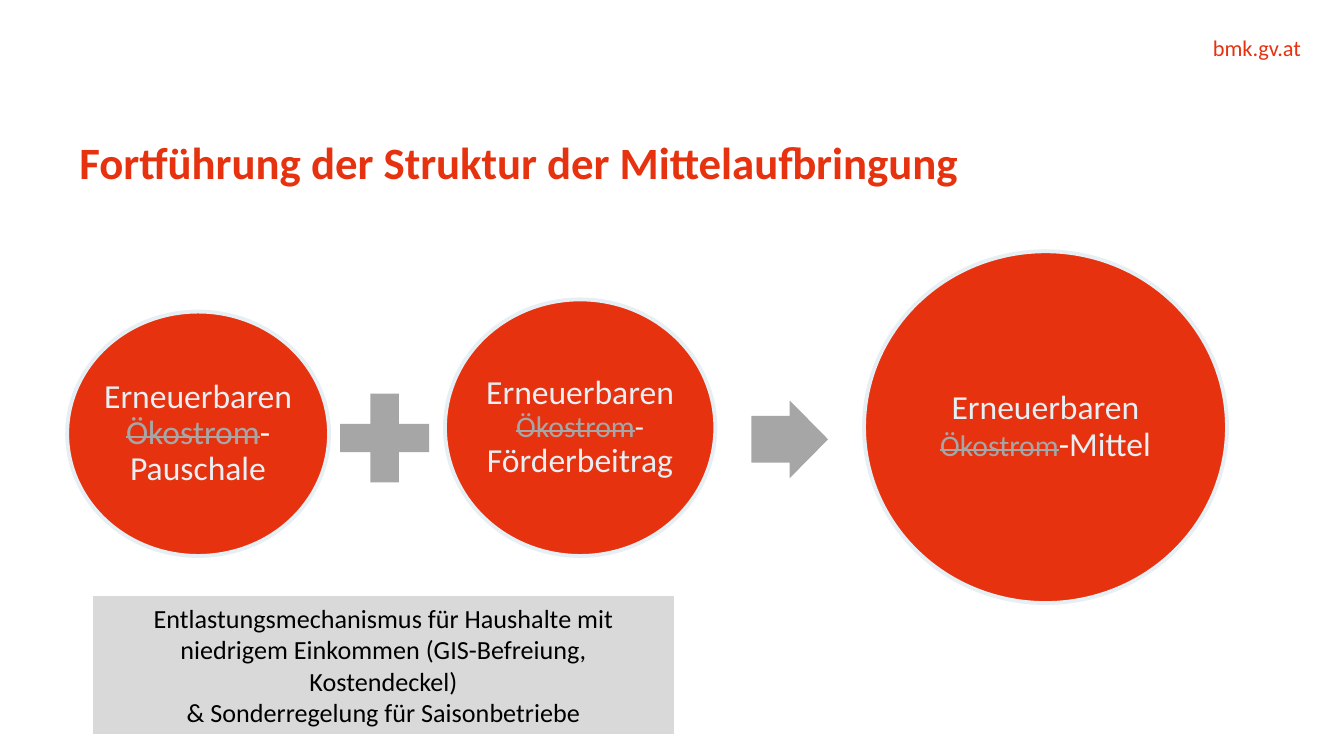
import pptx
import pptx.util
import pptx.dml.color
import pptx.enum.shapes
import pptx.enum.text

Cm = pptx.util.Cm
Pt = pptx.util.Pt
RGBColor = pptx.dml.color.RGBColor
Shape = pptx.enum.shapes.MSO_SHAPE
Align = pptx.enum.text.PP_ALIGN
Anchor = pptx.enum.text.MSO_ANCHOR

RED = RGBColor(0xE6, 0x32, 0x0F)
PALE = RGBColor(0xE6, 0xEF, 0xF3)
GREY = RGBColor(0xA6, 0xA6, 0xA6)
LIGHT = RGBColor(0xD9, 0xD9, 0xD9)
WHITE = RGBColor(0xFF, 0xFF, 0xFF)
BLACK = RGBColor(0, 0, 0)


class Deck:
    font = "Calibri"

    def __init__(self, wide, high):
        self.show = pptx.Presentation()
        self.show.slide_width = Cm(wide)
        self.show.slide_height = Cm(high)
        self.slide = self.show.slides.add_slide(self.show.slide_layouts[5])

    def frame(self, shape, anchor, side=0, edge=0, wrap=True):
        frame = shape.text_frame
        frame.word_wrap = wrap
        frame.auto_size = pptx.enum.text.MSO_AUTO_SIZE.NONE
        frame.vertical_anchor = anchor
        frame.margin_left = frame.margin_right = Cm(side)
        frame.margin_top = frame.margin_bottom = Cm(edge)
        return frame

    def run(self, para, text, size, color, bold=False, strike=False):
        run = para.add_run()
        run.text = text
        run.font.name = self.font
        run.font.size = Pt(size)
        run.font.bold = bold
        run.font.color.rgb = color
        if strike:
            run.font._element.set("strike", "sngStrike")

    def title(self, text, left, top, wide, high):
        shape = self.slide.shapes.title
        shape.left, shape.top = Cm(left), Cm(top)
        shape.width, shape.height = Cm(wide), Cm(high)
        para = self.frame(shape, Anchor.TOP, wrap=False).paragraphs[0]
        para.alignment = Align.LEFT
        para.line_spacing = Pt(30)
        self.run(para, text, 24, RED, bold=True)

    def label(self, text, left, top, wide, high):
        shape = self.slide.shapes.add_textbox(Cm(left), Cm(top), Cm(wide), Cm(high))
        para = self.frame(shape, Anchor.TOP).paragraphs[0]
        para.alignment = Align.RIGHT
        self.run(para, text, 12, RED)

    def shape(self, kind, fill, left, top, wide, high, line=None, weight=0.75):
        shape = self.slide.shapes.add_shape(kind, Cm(left), Cm(top), Cm(wide), Cm(high))
        shape.shadow.inherit = False
        shape.fill.solid()
        shape.fill.fore_color.rgb = fill
        if line is None:
            shape.line.fill.background()
        else:
            shape.line.color.rgb = line
            shape.line.width = Pt(weight)
        return shape

    def sign(self, kind, ratios, *place):
        shape = self.shape(kind, GREY, *place)
        for i, ratio in enumerate(ratios):
            shape.adjustments[i] = ratio

    def circle(self, place, old, dash, tail):
        shape = self.shape(Shape.OVAL, RED, *place, line=PALE, weight=2.08)
        para = self.frame(shape, Anchor.MIDDLE, side=-0.05).paragraphs[0]
        para.alignment = Align.CENTER
        para.line_spacing = 0.9
        self.run(para, "Erneuerbaren ", 18, PALE)
        self.run(para, "Ökostrom", old, GREY, strike=True)
        self.run(para, *dash)
        self.run(para, tail, 18, PALE)

    def note(self, lines, *place):
        shape = self.shape(Shape.RECTANGLE, LIGHT, *place, line=WHITE)
        frame = self.frame(shape, Anchor.MIDDLE, side=0.25, edge=0.13)
        for i, text in enumerate(lines):
            para = frame.add_paragraph() if i else frame.paragraphs[0]
            para.alignment = Align.CENTER
            self.run(para, text, 14, BLACK)


def main():
    deck = Deck(25.4, 14.29)
    deck.label("bmk.gv.at", 18.47, 0.64, 6.12, 0.51)
    deck.title("Fortführung der Struktur der Mittelaufbringung", 1.5, 2.51, 22.17, 1.73)
    deck.circle((1.27, 5.89, 4.95, 4.62), 18, ("-", 18, WHITE), "Pauschale")
    deck.sign(Shape.CROSS, [0.34], 6.43, 7.44, 1.68, 1.68)
    deck.circle((8.41, 5.66, 5.11, 4.85), 16, ("- ", 16, PALE), "Förderbeitrag")
    deck.sign(Shape.RIGHT_ARROW, [0.6, 0.5], 14.2, 7.57, 1.45, 1.47)
    deck.circle((16.33, 4.75, 6.86, 6.65), 16, ("-", 18, WHITE), "Mittel")
    deck.note(
        [
            "Entlastungsmechanismus für Haushalte mit niedrigem Einkommen "
            "(GIS-Befreiung, Kostendeckel)",
            "& Sonderregelung für Saisonbetriebe",
        ],
        1.75, 11.25, 11, 2.64,
    )
    deck.show.save("out.pptx")


if __name__ == "__main__":
    main()
